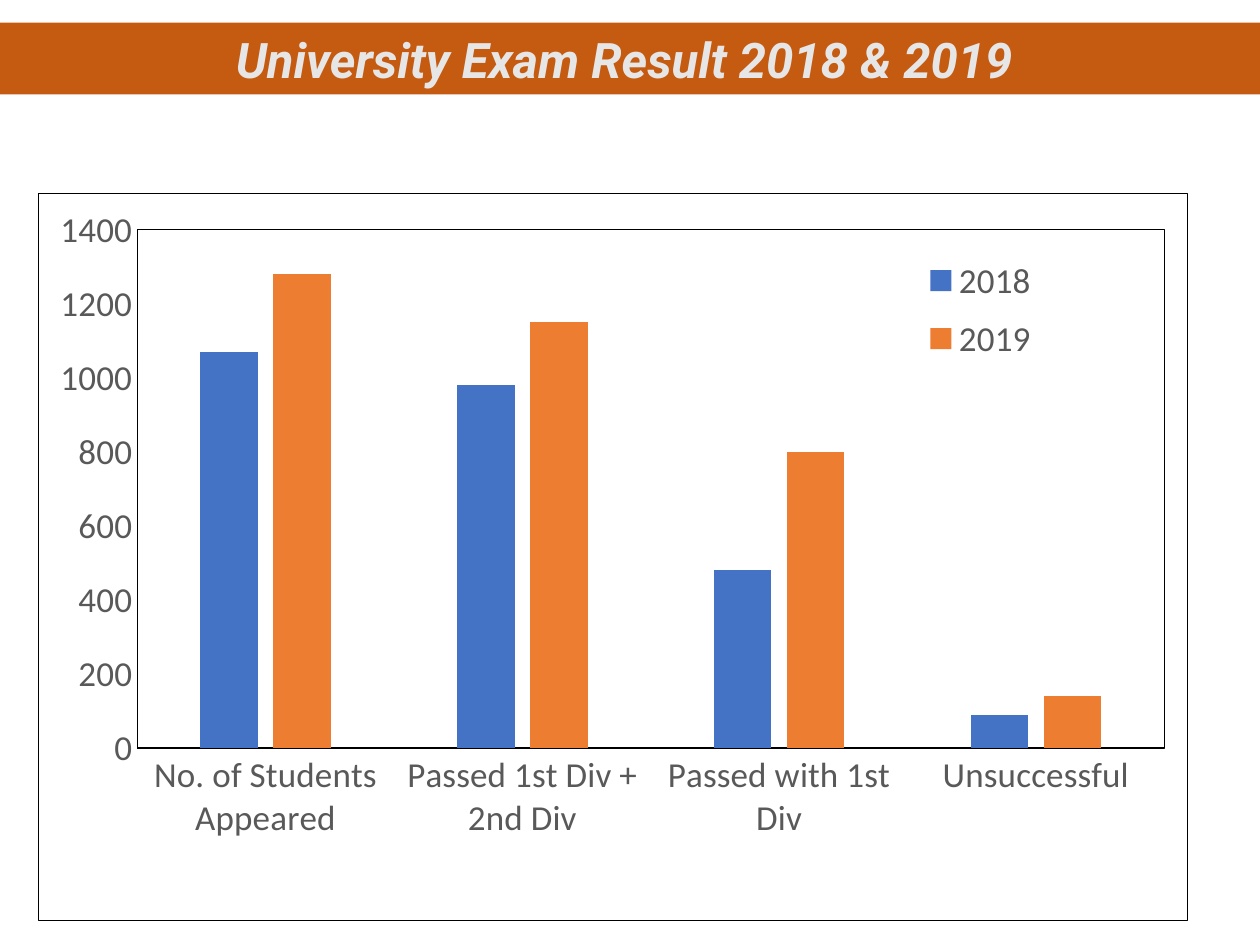
import pptx
import pptx.chart.data
import pptx.dml.color
import pptx.enum.chart
import pptx.enum.text
import pptx.oxml
import pptx.oxml.ns
import pptx.util
from pptx.util import Inches, Pt

TITLE = "University Exam Result 2018 & 2019 "
CATEGORIES = ["No. of Students Appeared", "Passed 1st Div + 2nd Div",
              "Passed with 1st Div", "Unsuccessful"]
SERIES = [("2018", [1070, 980, 480, 90], "4472C4"),
          ("2019", [1280, 1150, 800, 140], "ED7D31")]
# Fractions of the chart: left, top, width, height
PLOT_BOX = (0.086, 0.05, 0.894, 0.713)
LEGEND_BOX = (0.76, 0.07, 0.12, 0.18)
GREY, BLACK = "595959", "000000"


def rgb(color):
    return pptx.dml.color.RGBColor.from_string(color)


def set_font(font, name, size, color):
    font.name = name
    font.size = Pt(size)
    font.color.rgb = rgb(color)


def layout_xml(box, target=""):
    modes = '<c:xMode val="edge"/><c:yMode val="edge"/>'
    sizes = "".join(f'<c:{k} val="{v}"/>' for k, v in zip("xywh", box))
    return pptx.oxml.parse_xml(
        f'<c:layout {pptx.oxml.ns.nsdecls("c")}><c:manualLayout>'
        f'{target}{modes}{sizes}</c:manualLayout></c:layout>')


def border_xml():
    return pptx.oxml.parse_xml(
        f'<c:spPr {pptx.oxml.ns.nsdecls("c", "a")}><a:noFill/><a:ln w="{Pt(0.75)}">'
        f'<a:solidFill><a:srgbClr val="{BLACK}"/></a:solidFill></a:ln></c:spPr>')


def replace_layout(parent, layout, index):
    for old in parent.findall(pptx.oxml.ns.qn("c:layout")):
        parent.remove(old)
    parent.insert(index, layout)


def add_title(s):
    title = s.shapes.title
    title.left, title.top = Inches(0), Inches(0.18)
    title.width, title.height = Inches(10), Inches(0.57)
    title.fill.solid()
    title.fill.fore_color.rgb = rgb("C55A11")
    tf = title.text_frame
    tf.text = TITLE
    tf.word_wrap = True
    tf.auto_size = pptx.enum.text.MSO_AUTO_SIZE.NONE
    tf.vertical_anchor = pptx.enum.text.MSO_ANCHOR.MIDDLE
    p = tf.paragraphs[0]
    p.alignment = pptx.enum.text.PP_ALIGN.CENTER
    font = p.runs[0].font
    set_font(font, "Roboto", 28, "E7E6E6")
    font.bold = font.italic = True


def add_result_chart(s):
    data = pptx.chart.data.CategoryChartData()
    data.categories = CATEGORIES
    for name, values, _ in SERIES:
        data.add_series(name, values)
    chart = s.shapes.add_chart(
        pptx.enum.chart.XL_CHART_TYPE.COLUMN_CLUSTERED,
        Inches(0.3), Inches(1.53), Inches(9.13), Inches(5.78), data).chart
    chart.has_title = False
    set_font(chart.font, "Calibri", 10, BLACK)

    plot = chart.plots[0]
    plot.gap_width, plot.overlap = 219, -27
    plot.vary_by_categories = False
    for series, (_, _, color) in zip(plot.series, SERIES):
        series.format.fill.solid()
        series.format.fill.fore_color.rgb = rgb(color)

    for axis in (chart.category_axis, chart.value_axis):
        axis.has_major_gridlines = False
        axis.major_tick_mark = pptx.enum.chart.XL_TICK_MARK.NONE
        axis.minor_tick_mark = pptx.enum.chart.XL_TICK_MARK.NONE
        set_font(axis.tick_labels.font, "Calibri", 20, GREY)
        axis.format.line.color.rgb = rgb(BLACK)
        axis.format.line.width = Pt(0.75)
    chart.value_axis.minimum_scale = 0
    chart.value_axis.maximum_scale = 1400
    chart.value_axis.major_unit = 200

    chart.has_legend = True
    legend = chart.legend
    legend.position = pptx.enum.chart.XL_LEGEND_POSITION.BOTTOM
    legend.include_in_layout = False
    set_font(legend.font, "Calibri", 20, GREY)

    space = chart.element
    plot_area = space.chart.plotArea
    replace_layout(plot_area, layout_xml(PLOT_BOX, '<c:layoutTarget val="inner"/>'), 0)
    plot_area.append(border_xml())
    legend_xml = space.chart.find(pptx.oxml.ns.qn("c:legend"))
    replace_layout(legend_xml, layout_xml(LEGEND_BOX), 1)
    space.chart.addnext(border_xml())


def main():
    prs = pptx.Presentation()
    prs.slide_width, prs.slide_height = Inches(10), Inches(7.5)
    s = prs.slides.add_slide(prs.slide_layouts.get_by_name("Title Only"))
    add_title(s)
    add_result_chart(s)
    prs.save("out.pptx")


if __name__ == "__main__":
    main()
